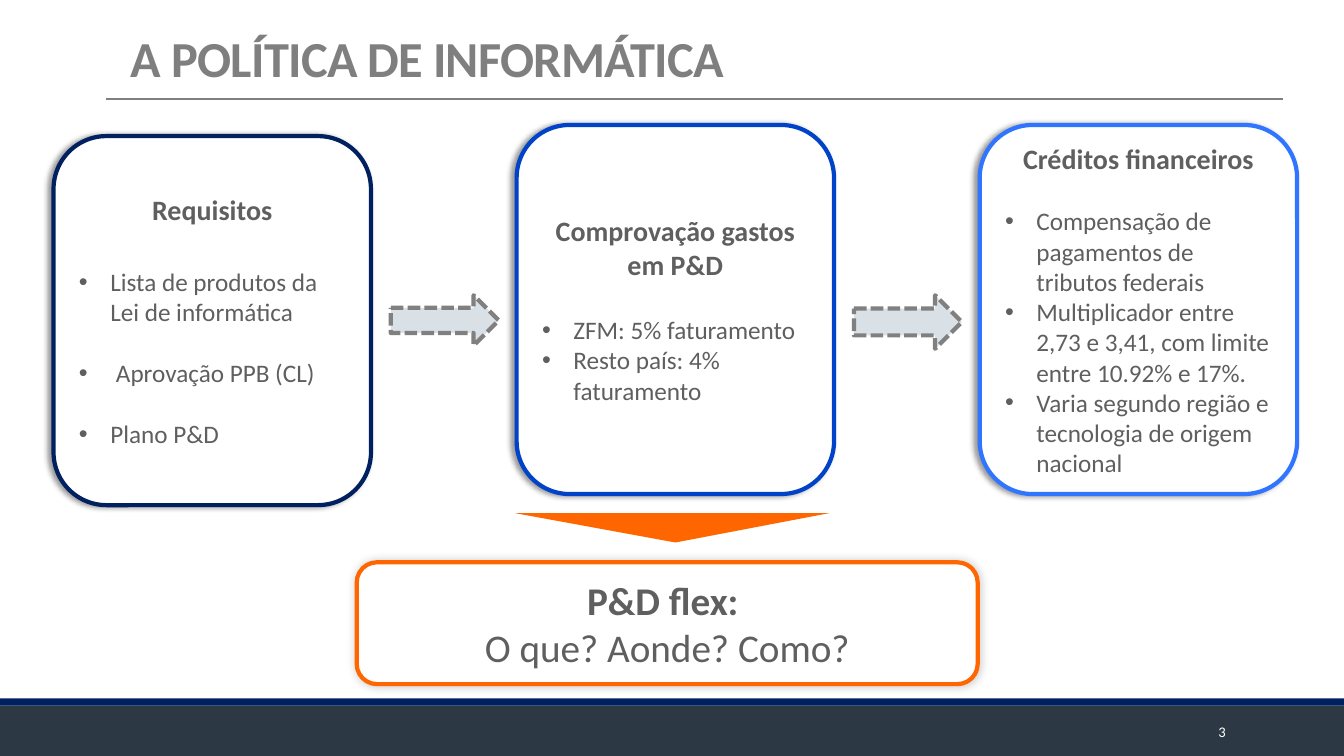
from lxml.etree import SubElement
from pptx import Presentation
from pptx.dml.color import RGBColor
from pptx.enum.dml import MSO_LINE
from pptx.enum.shapes import MSO_CONNECTOR, MSO_SHAPE
from pptx.enum.text import MSO_ANCHOR, PP_ALIGN
from pptx.oxml.ns import qn
from pptx.util import Cm, Pt

FONT = "Calibri"
TEXT_GREY = "5F5F5F"
LINE_GREY = "808080"
NAVY = "002060"
ORANGE = "FF6600"
WIDTH, HEIGHT = 33.87, 19.05

CARD_WIDTH, CARD_HEIGHT = 8, 9.3
CARD_LEFT, CARD_STEP = 1.35, 11.67
# top, border, heading, points, space above the first point, space above the others
CARDS = [
    (3.43, NAVY, "Requisitos",
     ["Lista de produtos da Lei de informática", " Aprovação PPB (CL)", "Plano P&D"], 29, 22),
    (3.15, "0042C8", "Comprovação gastos em P&D",
     ["ZFM: 5% faturamento", "Resto país: 4% faturamento"], 24, 0),
    (3.15, "3075FF", "Créditos financeiros",
     ["Compensação de pagamentos de tributos federais",
      "Multiplicador entre 2,73 e 3,41, com limite entre 10.92% e 17%.",
      "Varia segundo região e tecnologia de origem nacional"], 22, 0),
]
ARROW_HEIGHTS = [1.27, 1.35]


def color(hex_value):
    return RGBColor.from_string(hex_value)


def add_block(slide, kind, box, fill, border=None):
    block = slide.shapes.add_shape(kind, *map(Cm, box))
    block.shadow.inherit = False
    block.fill.solid()
    block.fill.fore_color.rgb = color(fill)
    if border:
        block.line.color.rgb = color(border)
        block.line.width = Pt(3)
    else:
        block.line.fill.background()
    return block


def add_shadow(block, opacity, blur, distance, angle):
    """Give a block an outer shadow; opacity in percent, lengths in points."""
    effects = block._element.spPr.find(qn("a:effectLst"))
    shadow = SubElement(effects, qn("a:outerShdw"), blurRad=str(Pt(blur)),
                        dist=str(Pt(distance)), dir=str(angle * 60000), rotWithShape="0")
    black = SubElement(shadow, qn("a:srgbClr"), val="000000")
    SubElement(black, qn("a:alpha"), val=str(opacity * 1000))


def write(paragraph, words, size, hex_value=TEXT_GREY, bold=False, align=PP_ALIGN.CENTER):
    paragraph.text = words
    paragraph.alignment = align
    font = paragraph.runs[0].font
    font.name, font.size, font.bold = FONT, Pt(size), bold
    font.color.rgb = color(hex_value)


def add_bullet(paragraph):
    properties = paragraph._p.get_or_add_pPr()
    properties.set("marL", str(Cm(0.79)))
    properties.set("indent", str(Cm(-0.79)))
    SubElement(properties, qn("a:buFont"), typeface="Arial")
    SubElement(properties, qn("a:buChar"), char="•")


def add_title(slide, left, top, width, height):
    title = slide.shapes.add_textbox(Cm(left), Cm(top), Cm(width), Cm(height))
    title.text_frame.word_wrap = True
    heading = title.text_frame.paragraphs[0]
    write(heading, "A POLÍTICA DE INFORMÁTICA", 36, "7F7F7F", True, PP_ALIGN.LEFT)
    heading.line_spacing = 0.85
    heading.runs[0].font._element.set("spc", "-50")

    rule_top = Cm(top + 1.7)
    rule = slide.shapes.add_connector(MSO_CONNECTOR.STRAIGHT, Cm(left - 0.38), rule_top,
                                      Cm(left + 29.28), rule_top)
    rule.line.color.rgb = color(LINE_GREY)
    rule.line.width = Pt(1)
    SubElement(rule._element.spPr, qn("a:effectLst"))


def add_card(slide, box, border, heading, points, first_gap, next_gap):
    card = add_block(slide, MSO_SHAPE.ROUNDED_RECTANGLE, box, "FFFFFF", border)
    add_shadow(card, 40, 4, 3, 180)
    frame = card.text_frame
    frame.word_wrap = True
    frame.vertical_anchor = MSO_ANCHOR.MIDDLE
    write(frame.paragraphs[0], heading, 20, bold=True)
    for index, point in enumerate(points):
        paragraph = frame.add_paragraph()
        write(paragraph, point, 18, align=PP_ALIGN.LEFT)
        paragraph.space_before = Pt(next_gap if index else first_gap)
        add_bullet(paragraph)


def add_step_arrow(slide, box):
    arrow = add_block(slide, MSO_SHAPE.RIGHT_ARROW, box, "D9E0E6", LINE_GREY)
    arrow.line.dash_style = MSO_LINE.SQUARE_DOT


def add_flow(slide, left, top):
    """Three cards with an arrow in each gap."""
    for index, (card_top, *content) in enumerate(CARDS):
        card_left = left + index * CARD_STEP
        add_card(slide, (card_left, card_top, CARD_WIDTH, CARD_HEIGHT), *content)
        if index < len(ARROW_HEIGHTS):
            add_step_arrow(slide, (card_left + CARD_WIDTH + 0.5, top + 4.29,
                                   2.72, ARROW_HEIGHTS[index]))


def add_conclusion(slide, left, top, width, height):
    pointer = add_block(slide, MSO_SHAPE.ISOSCELES_TRIANGLE,
                        (left + 3.99, top - 1.24, 7.92, 0.74), ORANGE)
    pointer.rotation = 180
    pointer.adjustments[0] = 0.49

    conclusion = add_block(slide, MSO_SHAPE.ROUNDED_RECTANGLE,
                           (left, top, width, height), "FFFFFF", ORANGE)
    add_shadow(conclusion, 20, 6, 0, 225)
    frame = conclusion.text_frame
    frame.word_wrap = True
    frame.vertical_anchor = MSO_ANCHOR.MIDDLE
    write(frame.paragraphs[0], "P&D flex: ", 28, bold=True)
    write(frame.add_paragraph(), "O que? Aonde? Como?", 28)


def add_footer(slide, top, height):
    add_block(slide, MSO_SHAPE.RECTANGLE, (0, top, WIDTH, height), "2C3843")
    add_block(slide, MSO_SHAPE.RECTANGLE, (0, top - 0.18, WIDTH, 0.18), NAVY)
    page = slide.shapes.add_textbox(Cm(27.51), Cm(top + 0.15), Cm(3.63), Cm(1.02))
    page.text_frame.word_wrap = True
    page.text_frame.vertical_anchor = MSO_ANCHOR.MIDDLE
    write(page.text_frame.paragraphs[0], "3", 10.5, "FFFFFF", align=PP_ALIGN.RIGHT)


def main():
    deck = Presentation()
    deck.slide_width, deck.slide_height = Cm(WIDTH), Cm(HEIGHT)
    slide = deck.slides.add_slide(deck.slide_layouts[6])
    add_footer(slide, 17.78, 1.27)
    add_flow(slide, CARD_LEFT, 3.15)
    add_conclusion(slide, 8.99, 14.17, 15.65, 3.07)
    add_title(slide, 3.05, 0.79, 27.94, 3.4)
    deck.save("out.pptx")


if __name__ == "__main__":
    main()
